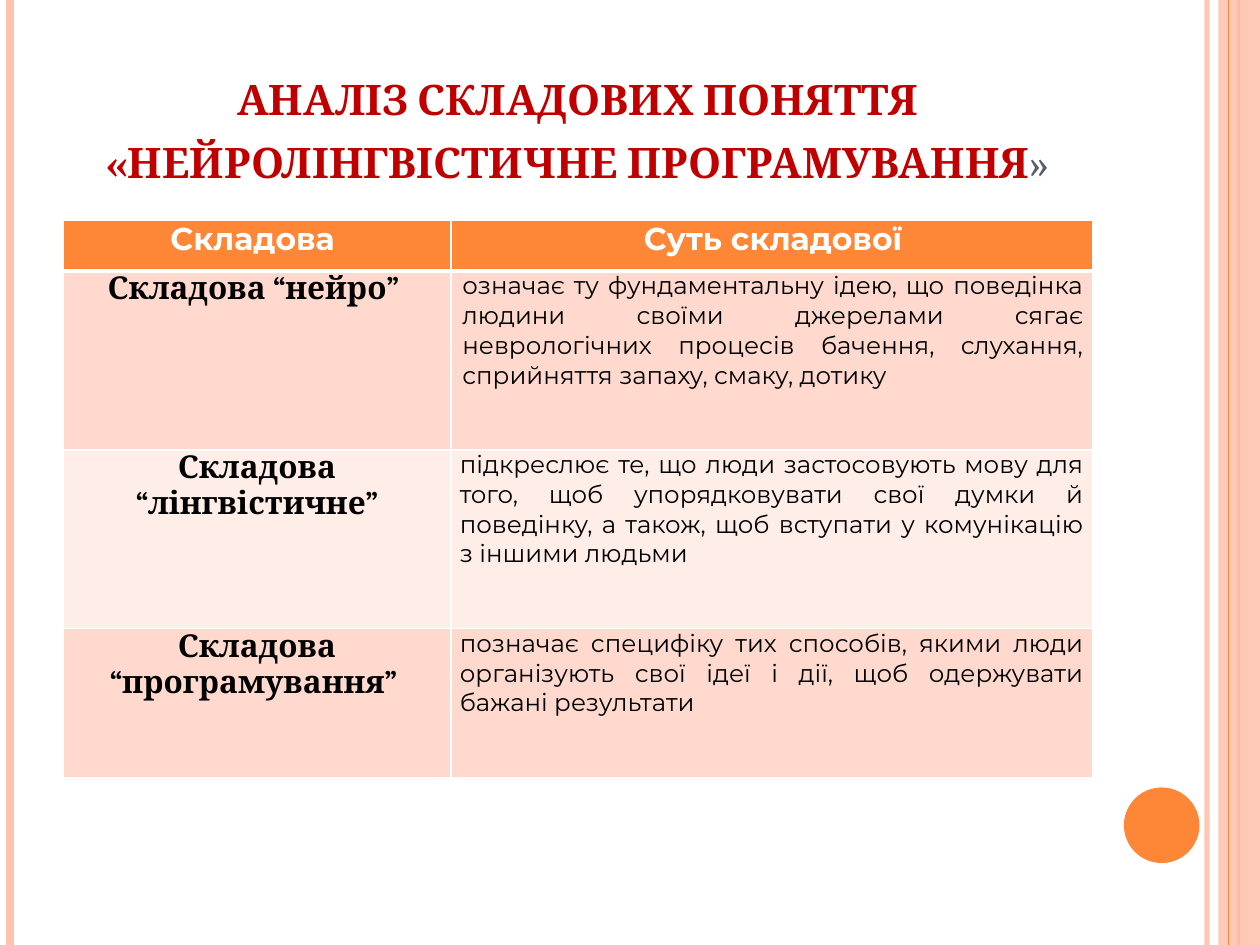
from lxml import etree
from pptx import Presentation
from pptx.dml.color import RGBColor
from pptx.enum.shapes import MSO_CONNECTOR, MSO_SHAPE
from pptx.enum.text import MSO_ANCHOR, PP_ALIGN
from pptx.oxml.ns import qn
from pptx.util import Inches, Pt

STRAIGHT = MSO_CONNECTOR.STRAIGHT
RECTANGLE, OVAL = MSO_SHAPE.RECTANGLE, MSO_SHAPE.OVAL
CENTER, JUSTIFY = PP_ALIGN.CENTER, PP_ALIGN.JUSTIFY
BOTTOM = MSO_ANCHOR.BOTTOM

ORANGE = RGBColor(0xFE, 0x86, 0x37)
PEACH = RGBColor(0xFE, 0xC3, 0xAE)
DARK_BAND = RGBColor(0xFF, 0xD9, 0xCE)
LIGHT_BAND = RGBColor(0xFF, 0xED, 0xE8)
RED = RGBColor(0xC0, 0x00, 0x00)
SLATE = RGBColor(0x57, 0x5F, 0x6D)
WHITE = RGBColor(0xFF, 0xFF, 0xFF)
BLACK = RGBColor(0x00, 0x00, 0x00)
SERIF, SANS = "Cambria", "Montserrat"

WIDTH, HEIGHT = 10, 7.5
MARGIN, CONTENT_WIDTH = 0.5, 8.17
COLUMN_SHARES = (0.377, 0.623)
ROW_HEIGHTS = (0.4, 1.42, 1.42, 1.18)

STRIPES = (
    (9.58, PEACH, 3, 93),
    (0.08, PEACH, 4.5, 100),
    (9.83, ORANGE, 1.5, 100),
    (9.75, ORANGE, 0.75, 100),
)
HEADINGS = ("Складова ", "Суть складової")
COMPONENTS = (
    ("Складова “нейро” ",
     "означає ту фундаментальну ідею, що поведінка людини своїми джерелами сягає "
     "неврологічних процесів бачення, слухання, сприйняття запаху, смаку, дотику"),
    ("Складова “лінгвістичне”",
     "підкреслює те, що люди застосовують мову для того, щоб упорядковувати свої "
     "думки й поведінку, а також, щоб вступати у комунікацію з іншими людьми"),
    ("Складова “програмування” ",
     "позначає специфіку тих способів, якими люди організують свої ідеї і дії, "
     "щоб одержувати бажані результати"),
)


def set_alpha(shape, percent):
    """Make every solid colour in the shape's properties translucent."""
    for color in shape._element.spPr.iter(qn("a:srgbClr")):
        etree.SubElement(color, qn("a:alpha")).set("val", str(percent * 1000))


def set_font(font, name, size, color, bold):
    """Set the look of a paragraph or a span."""
    font.name, font.size, font.bold = name, Pt(size), bold
    font.color.rgb = color


def add_stripe(page, x, color, weight, alpha):
    """Draw a line down the full height of the page."""
    stripe = page.shapes.add_connector(STRAIGHT, Inches(x), 0, Inches(x), Inches(HEIGHT))
    stripe.line.color.rgb = color
    stripe.line.width = Pt(weight)
    if alpha < 100:
        set_alpha(stripe, alpha)
    etree.SubElement(stripe._element.spPr, qn("a:effectLst"))


def add_plain_shape(page, kind, box, color):
    """Add a filled shape without outline."""
    shape = page.shapes.add_shape(kind, *map(Inches, box))
    shape.shadow.inherit = False
    shape.fill.solid()
    shape.fill.fore_color.rgb = color
    shape.line.fill.background()
    return shape


def add_decoration(page):
    """Place the side stripes, the right band and the disc."""
    for stripe in STRIPES[:3]:
        add_stripe(page, *stripe)
    band = add_plain_shape(page, RECTANGLE, (9.67, 0, WIDTH - 9.67, HEIGHT), PEACH)
    set_alpha(band, 87)
    add_stripe(page, *STRIPES[3])
    add_plain_shape(page, OVAL, (8.92, 6.25, 0.6, 0.6), ORANGE)


def fill_title(page, box):
    """Place and format the title in small capitals."""
    title = page.shapes.title
    title.left, title.top, title.width, title.height = map(Inches, box)
    frame = title.text_frame
    frame.word_wrap = True
    frame.vertical_anchor = BOTTOM
    para = frame.paragraphs[0]
    para.alignment = CENTER
    for text, color, bold in (
        ("аналіз складових поняття «нейролінгвістичне програмування", RED, True),
        ("»", SLATE, False),
    ):
        span = para.add_run()
        span.text = text
        set_font(span.font, SERIF, 30, color, bold)
        span.font._element.set("cap", "small")


def set_borders(cell, bottom):
    """Give a cell white borders, with its own weight at the bottom."""
    properties = cell._tc.get_or_add_tcPr()
    for index, (side, weight) in enumerate((("L", 1), ("R", 1), ("T", 1), ("B", bottom))):
        line = etree.Element(qn(f"a:ln{side}"), w=str(Pt(weight)))
        fill = etree.SubElement(line, qn("a:solidFill"))
        etree.SubElement(fill, qn("a:srgbClr"), val=str(WHITE))
        properties.insert(index, line)


def fill_cell(cell, text, fill, look, alignment, bottom=1):
    """Write and format one table cell."""
    cell.margin_left = cell.margin_right = Inches(0.07)
    cell.margin_top = cell.margin_bottom = 0
    cell.fill.solid()
    cell.fill.fore_color.rgb = fill
    set_borders(cell, bottom)
    para = cell.text_frame.paragraphs[0]
    para.text = text
    para.alignment = alignment
    set_font(para.font, *look)


def add_component_table(page, box):
    """Add the table of components and their meanings."""
    rows = len(ROW_HEIGHTS)
    table = page.shapes.add_table(rows, len(COLUMN_SHARES), *map(Inches, box)).table
    for column, share in zip(table.columns, COLUMN_SHARES):
        column.width = Inches(box[2] * share)
    for row, height in zip(table.rows, ROW_HEIGHTS):
        row.height = Inches(height)
    for column, heading in enumerate(HEADINGS):
        fill_cell(table.cell(0, column), heading, ORANGE, (SANS, 18, WHITE, True), CENTER, 3)
    for row, (name, meaning) in enumerate(COMPONENTS, 1):
        band = DARK_BAND if row % 2 else LIGHT_BAND
        fill_cell(table.cell(row, 0), name, band, (SERIF, 18, BLACK, True), CENTER,)
        fill_cell(table.cell(row, 1), meaning, band, (SANS, 14, BLACK, False), JUSTIFY)
    for row in (0, 1):
        para = table.cell(row, 1).text_frame.paragraphs[0]
        para._p.get_or_add_pPr().set("marL", str(Inches(0.02)))


def main():
    """Build the slide and save the deck."""
    deck = Presentation()
    deck.slide_width, deck.slide_height = Inches(WIDTH), Inches(HEIGHT)
    page = deck.slides.add_slide(deck.slide_layouts[5])
    add_decoration(page)
    fill_title(page, (MARGIN, 0.3, CONTENT_WIDTH, 1.25))
    add_component_table(page, (MARGIN, 1.75, CONTENT_WIDTH, sum(ROW_HEIGHTS)))
    deck.save("out.pptx")


if __name__ == "__main__":
    main()
